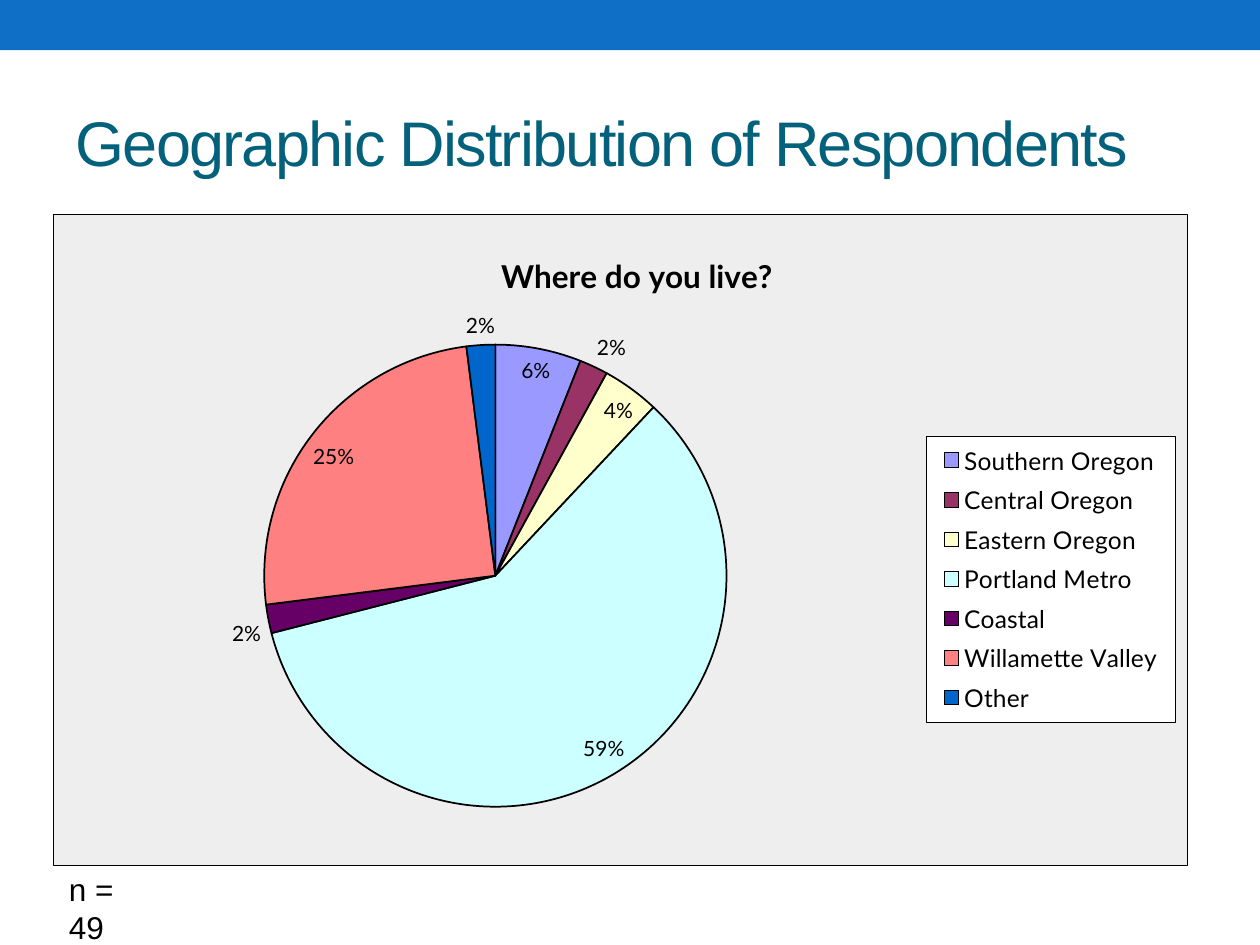
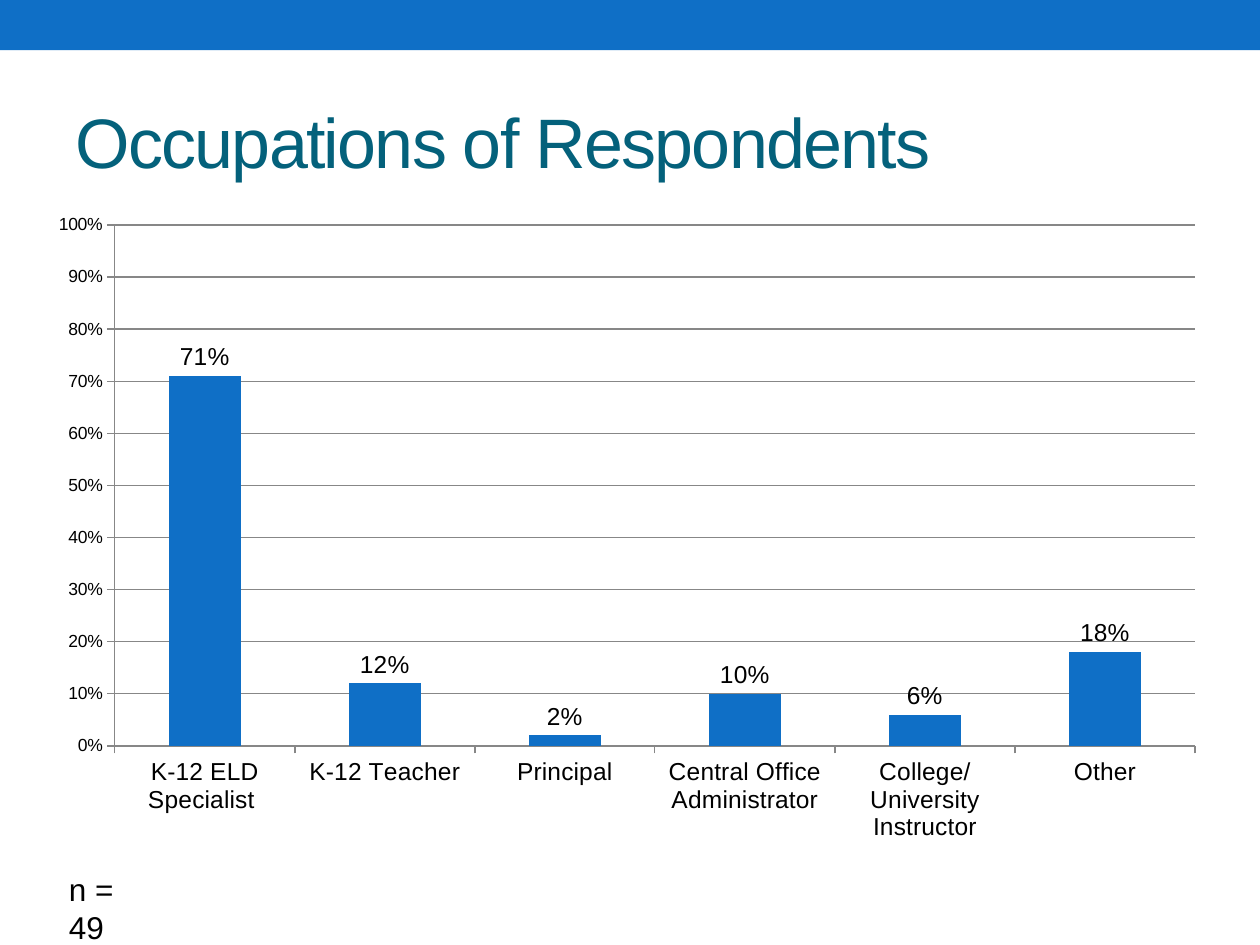
"""Build two survey slides: where respondents live and what they do."""
from lxml import etree
from pptx import Presentation
from pptx.chart.data import CategoryChartData
from pptx.dml.color import RGBColor
from pptx.enum.chart import XL_CHART_TYPE, XL_LABEL_POSITION, XL_LEGEND_POSITION, XL_TICK_MARK
from pptx.enum.shapes import MSO_SHAPE
from pptx.enum.text import MSO_ANCHOR, MSO_AUTO_SIZE, PP_ALIGN
from pptx.oxml import parse_xml
from pptx.oxml.ns import nsdecls, qn
from pptx.util import Cm, Pt

PIE, COLUMN = XL_CHART_TYPE.PIE, XL_CHART_TYPE.COLUMN_CLUSTERED
BEST_FIT, OUTSIDE_END = XL_LABEL_POSITION.BEST_FIT, XL_LABEL_POSITION.OUTSIDE_END
LEGEND_RIGHT = XL_LEGEND_POSITION.RIGHT
TICK_OUT, TICK_NONE = XL_TICK_MARK.OUTSIDE, XL_TICK_MARK.NONE
RECTANGLE = MSO_SHAPE.RECTANGLE
MIDDLE, LEFT, NO_FIT = MSO_ANCHOR.MIDDLE, PP_ALIGN.LEFT, MSO_AUTO_SIZE.NONE

BLUE, TEAL, BLACK, WHITE = "0F6FC6", "04617B", "000000", "FFFFFF"
PANEL_GREY, AXIS_GREY = "EEEEEE", "878787"
BODY_FONT, PIE_FONT = "Arial", "Lato"
SAMPLE_SIZE = "n = 49"

REGIONS = [
    ("Southern Oregon", 0.06, "9999FF"),
    ("Central Oregon", 0.02, "993366"),
    ("Eastern Oregon", 0.04, "FFFFCC"),
    ("Portland Metro", 0.59, "CCFFFF"),
    ("Coastal", 0.02, "660066"),
    ("Willamette Valley", 0.25, "FF8080"),
    ("Other", 0.02, "0066CC"),
]
OCCUPATIONS = [
    ("K-12 ELD Specialist ", 0.71),
    ("K-12 Teacher", 0.12),
    ("Principal", 0.02),
    ("Central Office Administrator", 0.10),
    ("College/University Instructor", 0.06),
    ("Other", 0.18),
]


def color(value):
    return RGBColor.from_string(value)


def style_font(font, size, shade=BLACK, name=BODY_FONT, bold=False):
    font.size, font.name, font.bold = Pt(size), name, bold
    font.color.rgb = color(shade)


def lengths(*values):
    return [Cm(value) for value in values]


def add_band(deck, page):
    """Draw the top band and move it to the master, behind everything."""
    band = page.shapes.add_shape(RECTANGLE, 0, 0, deck.slide_width, Cm(1.01))
    band.shadow.inherit = False
    band.fill.solid()
    band.fill.fore_color.rgb = color(BLUE)
    band.line.fill.background()
    deck.slide_master.element.cSld.spTree.insert(2, band.element)


def add_page(deck, heading, size):
    """Add a page with its title and sample size."""
    page = deck.slides.add_slide(deck.slide_layouts[5])
    title = page.shapes.title
    title.left, title.top, title.width, title.height = lengths(1.27, 1.47, 22.86, 2.74)
    note = page.shapes.add_textbox(*lengths(1.14, 17.42, 2.1, 1.02))
    for box, text, points, shade in ((title, heading, size, TEAL), (note, SAMPLE_SIZE, 18, BLACK)):
        frame = box.text_frame
        frame.word_wrap, frame.auto_size = True, NO_FIT
        para = frame.paragraphs[0]
        para.alignment = LEFT
        span = para.add_run()
        span.text = text
        style_font(span.font, points, shade)
    title.text_frame.vertical_anchor = MIDDLE
    title.text_frame.paragraphs[0].runs[0].font._element.set("spc", "-100")
    return page


def add_chart(page, kind, rows, place, font_name):
    """Add a one-series chart and return it."""
    data = CategoryChartData(number_format="0%")
    data.categories = [row[0] for row in rows]
    data.add_series("Series 1", [row[1] for row in rows])
    chart = page.shapes.add_chart(kind, *lengths(*place), data).chart
    chart.has_title = chart.has_legend = False
    style_font(chart.font, 10, name=font_name)
    return chart


def add_labels(plot, size, position, font_name):
    plot.has_data_labels = True
    labels = plot.data_labels
    labels.show_value = True
    labels.number_format, labels.number_format_is_linked = "0%", False
    labels.position = position
    style_font(labels.font, size, name=font_name)


def set_layout(part, index, **fractions):
    """Place a chart part by fractions of the chart area."""
    for old in part.findall(qn("c:layout")):
        part.remove(old)
    layout = parse_xml(f"<c:layout {nsdecls('c')}><c:manualLayout/></c:layout>")
    manual = layout[0]
    if part.tag == qn("c:plotArea"):
        etree.SubElement(manual, qn("c:layoutTarget")).set("val", "inner")
    for axis in "xy":
        etree.SubElement(manual, qn(f"c:{axis}Mode")).set("val", "edge")
    for key, value in fractions.items():
        etree.SubElement(manual, qn(f"c:{key}")).set("val", str(value))
    part.insert(index, layout)


def panel(fill, border=None):
    """Return shape properties with a solid fill and a thin or absent line."""
    def solid(shade):
        return f'<a:solidFill><a:srgbClr val="{shade}"/></a:solidFill>'
    line = solid(border) if border else "<a:noFill/>"
    return parse_xml(f"<c:spPr {nsdecls('c', 'a')}>{solid(fill)}"
                     f'<a:ln w="{Pt(0.25)}">{line}</a:ln></c:spPr>')


def fill_region_page(page):
    chart = add_chart(page, PIE, REGIONS, (1.07, 4.32, 22.86, 13.13), PIE_FONT)
    plot = chart.plots[0]
    plot.vary_by_categories = True
    add_labels(plot, 12, BEST_FIT, PIE_FONT)
    for index, (_, _, shade) in enumerate(REGIONS):
        look = plot.series[0].points[index].format
        look.fill.solid()
        look.fill.fore_color.rgb = color(shade)
        look.line.color.rgb = color(BLACK)
        look.line.width = Pt(1)

    chart.has_title = True
    span = chart.chart_title.text_frame.paragraphs[0].add_run()
    span.text = "Where do you live?"
    style_font(span.font, 18, name=PIE_FONT, bold=True)
    chart.chart_title.include_in_layout = False

    chart.has_legend = True
    chart.legend.position = LEGEND_RIGHT
    chart.legend.include_in_layout = False
    style_font(chart.legend.font, 14, name=PIE_FONT)

    body = chart._chartSpace.find(qn("c:chart"))
    title, area, legend = (body.find(qn(f"c:{tag}")) for tag in ("title", "plotArea", "legend"))
    set_layout(title, 1, x=0.39, y=0.05)
    set_layout(area, 0, x=0.18, y=0.2, w=0.42, h=0.71)
    set_layout(legend, 1, x=0.77, y=0.34, w=0.22, h=0.44)
    area.append(panel(PANEL_GREY))
    legend.find(qn("c:overlay")).addnext(panel(WHITE, BLACK))
    body.addnext(panel(PANEL_GREY, BLACK))


def fill_occupation_page(page):
    chart = add_chart(page, COLUMN, OCCUPATIONS, (0.64, 4.01, 23.93, 13.13), BODY_FONT)
    plot = chart.plots[0]
    plot.vary_by_categories = False
    plot.gap_width = 150
    add_labels(plot, 14, OUTSIDE_END, BODY_FONT)
    bars = plot.series[0].format.fill
    bars.solid()
    bars.fore_color.rgb = color(BLUE)

    scale = chart.value_axis
    scale.minimum_scale, scale.maximum_scale, scale.major_unit = 0, 1, 0.1
    scale.has_major_gridlines = True
    scale.tick_labels.number_format = "0%"
    scale.tick_labels.number_format_is_linked = False
    for axis, size in ((scale, 10), (chart.category_axis, 14)):
        axis.major_tick_mark, axis.minor_tick_mark = TICK_OUT, TICK_NONE
        style_font(axis.tick_labels.font, size)
    for part in (scale, chart.category_axis, scale.major_gridlines):
        part.format.line.color.rgb = color(AXIS_GREY)
        part.format.line.width = Pt(0.75)
    area = chart._chartSpace.find(qn("c:chart")).find(qn("c:plotArea"))
    set_layout(area, 0, x=0.07, y=0.04, w=0.91, h=0.8)


def main():
    deck = Presentation()
    deck.slide_width, deck.slide_height = lengths(25.4, 19.05)
    regions = add_page(deck, "Geographic Distribution of Respondents", 36)
    add_band(deck, regions)
    fill_region_page(regions)
    fill_occupation_page(add_page(deck, "Occupations of Respondents", 40))
    deck.save("out.pptx")


if __name__ == "__main__":
    main()
